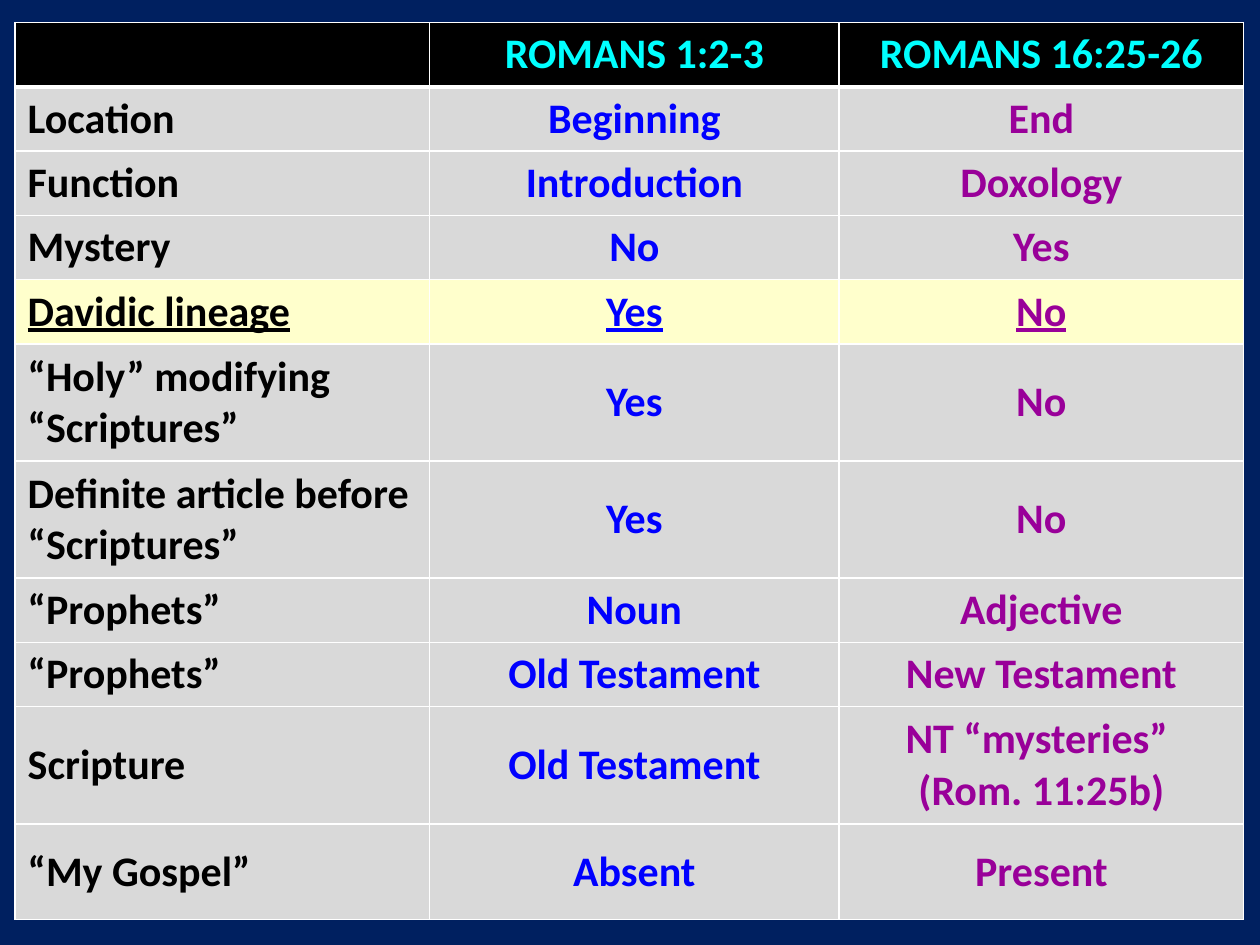
import pptx
import pptx.util
import pptx.dml.color
import pptx.enum.text
import pptx.oxml
import pptx.oxml.ns
from pptx.util import Inches


def color(value):
    return pptx.dml.color.RGBColor.from_string(value)


def add_border(cell, side, width):
    """Draw a white border on side L, R, T or B; call before filling the cell."""
    cell._tc.get_or_add_tcPr().append(pptx.oxml.parse_xml(
        f'<a:ln{side} {pptx.oxml.ns.nsdecls("a")} w="{pptx.util.Pt(width)}">'
        f'<a:solidFill><a:srgbClr val="FFFFFF"/></a:solidFill></a:ln{side}>'))


ROWS = [
    ("", "ROMANS 1:2-3", "ROMANS 16:25-26"),
    ("Location", "Beginning", "End"),
    ("Function", "Introduction", "Doxology"),
    ("Mystery", "No", "Yes"),
    ("Davidic lineage", "Yes", "No"),
    ("“Holy” modifying “Scriptures”", "Yes", "No"),
    ("Definite article before “Scriptures”", "Yes", "No"),
    ("“Prophets”", "Noun", "Adjective"),
    ("“Prophets”", "Old Testament", "New Testament"),
    ("Scripture", "Old Testament", "NT “mysteries” \n(Rom. 11:25b)"),
    ("“My Gospel”", "Absent", "Present"),
]
COL_WIDTHS = [3.29, 3.25, 3.21]
COL_COLORS = ["000000", "0000FF", "990099"]
ROW_HEIGHT = 0.51
TALL_ROWS = {5: 0.93, 6: 0.93, 9: 0.93, 10: 0.76}
HIGHLIGHT_ROW = 4

prs = pptx.Presentation()
prs.slide_width, prs.slide_height = Inches(10), Inches(7.5)
s = prs.slides.add_slide(prs.slide_layouts[6])
s.background.fill.solid()
s.background.fill.fore_color.rgb = color("002060")

heights = [TALL_ROWS.get(i, ROW_HEIGHT) for i in range(len(ROWS))]
table = s.shapes.add_table(
    len(ROWS), len(COL_WIDTHS), Inches(0.12), Inches(0.18),
    Inches(sum(COL_WIDTHS)), Inches(sum(heights))).table
for column, width in zip(table.columns, COL_WIDTHS):
    column.width = Inches(width)
for row, height in zip(table.rows, heights):
    row.height = Inches(height)

for i, texts in enumerate(ROWS):
    header, highlight = i == 0, i == HIGHLIGHT_ROW
    fill = "000000" if header else "FFFFCC" if highlight else "D9D9D9"
    for j, text in enumerate(texts):
        cell = table.cell(i, j)
        widths = {"L": 1, "R": 1, "T": 3 if i == 1 else 1, "B": 3 if header else 1}
        for side, width in widths.items():
            add_border(cell, side, width)
        cell.fill.solid()
        cell.fill.fore_color.rgb = color(fill)
        if not header:
            cell.vertical_anchor = pptx.enum.text.MSO_ANCHOR.MIDDLE
        cell.text = text
        font_format = {"name": "Calibri", "size": pptx.util.Pt(24),
                       "bold": True, "underline": highlight}
        for p in cell.text_frame.paragraphs:
            if j > 0:
                p.alignment = pptx.enum.text.PP_ALIGN.CENTER
            for r in p.runs:
                for name, value in font_format.items():
                    setattr(r.font, name, value)
                r.font.color.rgb = color("00FFFF" if header else COL_COLORS[j])

prs.save("out.pptx")
